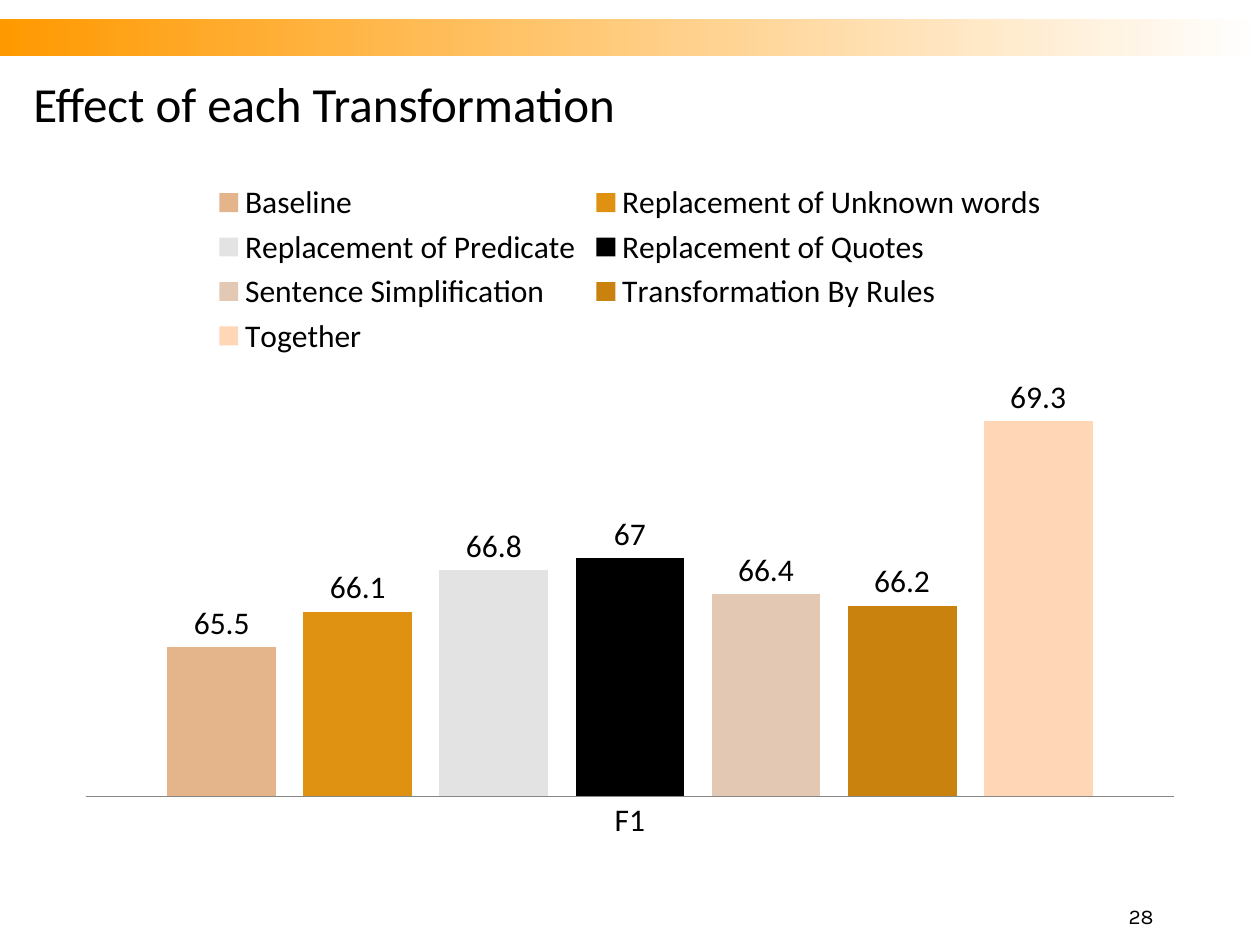
import pptx
import pptx.util
import pptx.dml.color
import pptx.chart.data
import pptx.enum.chart
import pptx.enum.shapes
import pptx.enum.text
import pptx.oxml

SCALE = 914400 / 126  # EMU per px
COLORS = {
    "text": "000000",
    "bar_start": "FF9900",
    "bar_end": "FFFFFF",
    "axis": "868686",
}
SERIES = [
    ("Baseline", 65.5, "E4B48A"),
    ("Replacement of Unknown words", 66.1, "DF9112"),
    ("Replacement of Predicate", 66.8, "E3E3E3"),
    ("Replacement of Quotes", 67, "000000"),
    ("Sentence Simplification", 66.4, "E3C8B3"),
    ("Transformation By Rules", 66.2, "C9820E"),
    ("Together", 69.3, "FFD7B7"),
]
rgb = pptx.dml.color.RGBColor.from_string
ALIGN = pptx.enum.text.PP_ALIGN
ANCHOR = pptx.enum.text.MSO_ANCHOR


def px(*values):
    return [round(v * SCALE) for v in values]


def add_text(s, text, box, size, font, align=ALIGN.LEFT, anchor=ANCHOR.MIDDLE):
    tf = s.shapes.add_textbox(*px(*box)).text_frame
    tf.word_wrap = True
    tf.vertical_anchor = anchor
    p = tf.paragraphs[0]
    p.alignment = align
    r = p.add_run()
    r.text = text
    r.font.size = pptx.util.Pt(size)
    r.font.name = font
    r.font.color.rgb = rgb(COLORS["text"])


prs = pptx.Presentation()
prs.slide_width, prs.slide_height = px(1260, 945)
s = prs.slides.add_slide(prs.slide_layouts[6])

# Gradient band
sp = s.shapes.add_shape(pptx.enum.shapes.MSO_SHAPE.RECTANGLE, *px(0, 19, 1260, 37))
sp.shadow.inherit = False
sp.line.fill.background()
sp.fill.gradient()
sp.fill.gradient_angle = 0
for stop, name in zip(sp.fill.gradient_stops, ("bar_start", "bar_end")):
    stop.color.rgb = rgb(COLORS[name])

# Title
add_text(s, "Effect of each Transformation", (21, 66, 1134, 73), 28, "Calibri")

# Chart
data = pptx.chart.data.CategoryChartData()
data.categories = ["F1"]
for name, value, color in SERIES:
    data.add_series(name, [value])
chart = s.shapes.add_chart(
    pptx.enum.chart.XL_CHART_TYPE.COLUMN_CLUSTERED, *px(63, 168, 1134, 683), data
).chart
chart.has_title = False
chart.font.size = pptx.util.Pt(18)
chart.font.name = "Calibri"
chart.font.color.rgb = rgb(COLORS["text"])

# Bars and value labels
plot = chart.plots[0]
plot.gap_width = 150
plot.overlap = -25
plot.vary_by_categories = False
for series, (name, value, color) in zip(plot.series, SERIES):
    series.format.fill.solid()
    series.format.fill.fore_color.rgb = rgb(color)
    series.invert_if_negative = False
    labels = series.data_labels
    labels.show_value = True
    labels.position = pptx.enum.chart.XL_LABEL_POSITION.OUTSIDE_END

# Axes
axis = chart.category_axis
axis.major_tick_mark = pptx.enum.chart.XL_TICK_MARK.NONE
axis.format.line.color.rgb = rgb(COLORS["axis"])
axis.format.line.width = pptx.util.Pt(0.75)
axis = chart.value_axis
axis.minimum_scale = 63
axis.maximum_scale = 70
axis.has_major_gridlines = False
axis.visible = False

# Legend
chart.has_legend = True
chart.legend.position = pptx.enum.chart.XL_LEGEND_POSITION.TOP
chart.legend.include_in_layout = False

# Plot area position, as fractions of the chart
area = chart._chartSpace.chart.plotArea
for old in area.findall(pptx.oxml.ns.qn("c:layout")):
    area.remove(old)
fractions = "".join(
    f'<c:{k} val="{v}"/>' for k, v in (("x", 0.02), ("y", 0.31), ("w", 0.96), ("h", 0.61))
)
area.insert(0, pptx.oxml.parse_xml(
    f'<c:layout {pptx.oxml.ns.nsdecls("c")}><c:manualLayout><c:layoutTarget val="inner"/>'
    f'<c:xMode val="edge"/><c:yMode val="edge"/>{fractions}</c:manualLayout></c:layout>'
))

# Slide number
add_text(s, "28", (1040, 903, 126, 32), 12, "Karla", ALIGN.RIGHT, ANCHOR.BOTTOM)

prs.save("out.pptx")
